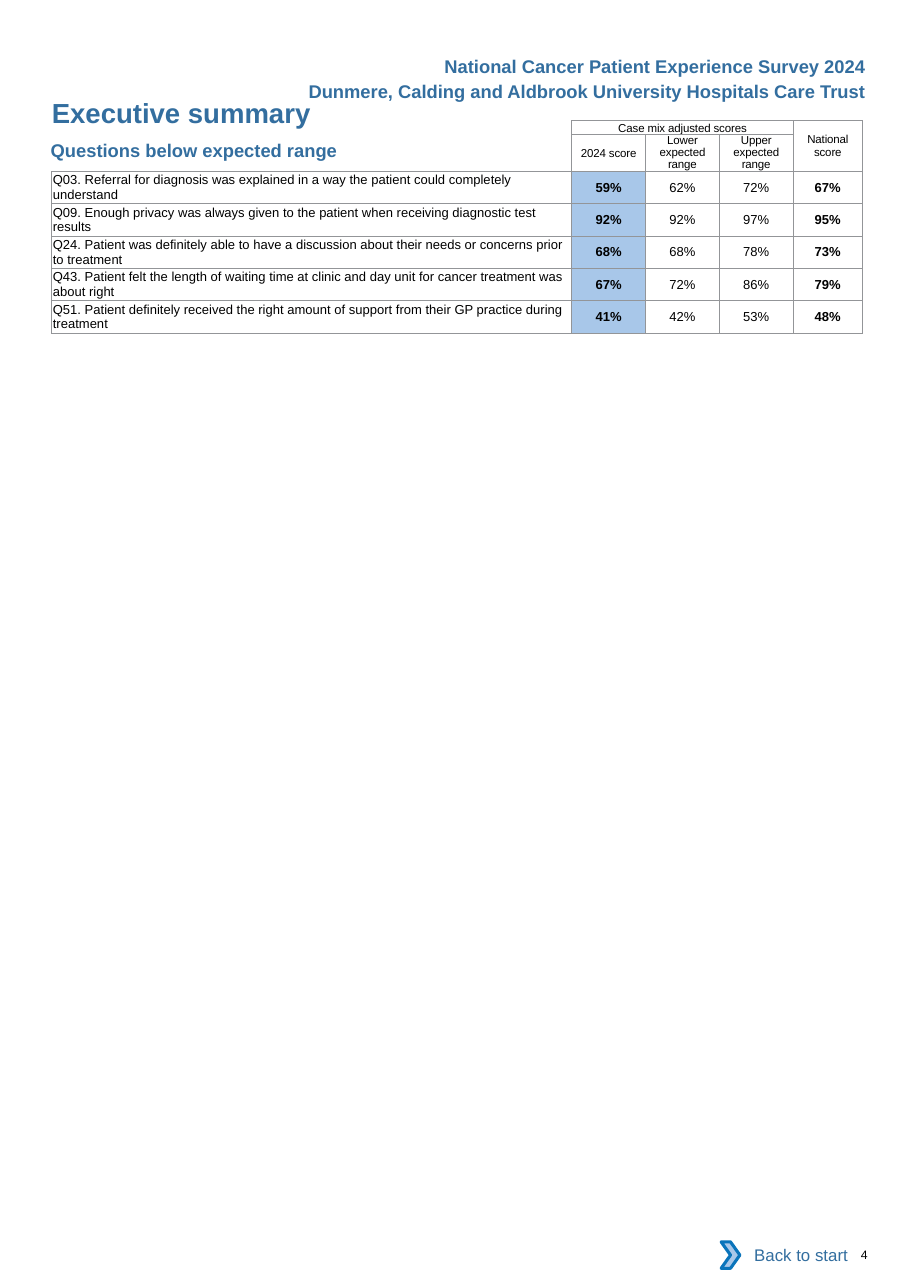
from lxml import etree
from pptx import Presentation, util as u
from pptx.dml.color import RGBColor
from pptx.enum import shapes, text
from pptx.oxml.ns import qn

BLUE = RGBColor(0x33, 0x6E, 0x9F)
LIGHT_BLUE = RGBColor(0xA8, 0xC7, 0xE9)
OUTLINE_BLUE = RGBColor(0x0A, 0x74, 0xBB)
GREY = RGBColor(0x93, 0x95, 0x98)
BLACK = RGBColor(0, 0, 0)
WHITE = RGBColor(255, 255, 255)

WIDTH, HEIGHT = u.Inches(8.26), u.Inches(11.69)
LEFT, CENTER, RIGHT = text.PP_ALIGN.LEFT, text.PP_ALIGN.CENTER, text.PP_ALIGN.RIGHT

LABELS = [
    ("National Cancer Patient Experience Survey 2024", (47.46, 4.3, 47.7, 1.71),
     dict(size=12, bold=True, color=BLUE, align=RIGHT)),
    ("Dunmere, Calding and Aldbrook University Hospitals Care Trust", (30.99, 6.24, 64.17, 1.71),
     dict(size=12, bold=True, color=BLUE, align=RIGHT)),
    ("Executive summary", (5.69, 7.47, 31.96, 2.57), dict(size=18, bold=True, color=BLUE)),
    ("Questions below expected range", (5.57, 10.78, 36.44, 1.71),
     dict(size=12, bold=True, color=BLUE)),
    ("4", (94.6, 96.85, 4.84, 1.11), dict(size=8)),
]
BUTTON = (80.1, 95.65, 14.29, 3.59)
CHEVRON = (79.25, 96.42, 2.06, 2.05)

TABLE_CORNER = (5.69, 9.38)
COLUMNS = [57.14, 8.11, 8.11, 8.11, 7.63]
HEADER_ROWS = [1.07, 2.86]
DATA_ROW = 2.51
MERGES = [((0, 0), (1, 0)), ((0, 1), (0, 3)), ((0, 4), (1, 4))]
HEADERS = {
    (0, 0): ("", 0, None),
    (0, 1): ("Case mix adjusted scores", 0, 9),
    (0, 4): ("National score", 0.08, None),
    (1, 1): ("2024 score", 0, None),
    (1, 2): ("Lower expected range", 0.08, 7.6),
    (1, 3): ("Upper expected range", 0.08, 7.6),
}
SCORES = [
    ("Q03. Referral for diagnosis was explained in a way the patient could completely understand",
     "59%", "62%", "72%", "67%"),
    ("Q09. Enough privacy was always given to the patient when receiving diagnostic test results",
     "92%", "92%", "97%", "95%"),
    ("Q24. Patient was definitely able to have a discussion about their needs or concerns prior to treatment",
     "68%", "68%", "78%", "73%"),
    ("Q43. Patient felt the length of waiting time at clinic and day unit for cancer treatment was about right",
     "67%", "72%", "86%", "79%"),
    ("Q51. Patient definitely received the right amount of support from their GP practice during treatment",
     "41%", "42%", "53%", "48%"),
]


def across(percent):
    return round(WIDTH * percent / 100)


def down(percent):
    return round(HEIGHT * percent / 100)


def place(box):
    left, top, width, height = box
    return across(left), down(top), across(width), down(height)


def write(frame, words, size=8.5, bold=False, color=BLACK, align=LEFT, line=None, spacing=0):
    paragraph = frame.paragraphs[0]
    paragraph.alignment = align
    if line:
        paragraph.line_spacing = u.Pt(line)
    run = paragraph.add_run()
    run.text = words
    run.font.name = "Arial"
    run.font.size = u.Pt(size)
    run.font.bold = bold
    run.font.color.rgb = color
    if spacing:
        run.font._element.set("spc", str(round(spacing * 100)))


def set_borders(cell, sides):
    properties = cell._tc.get_or_add_tcPr()
    for index, side in enumerate("LRTB"):
        border = etree.Element(qn(f"a:ln{side}"), w=str(u.Pt(0.5)))
        if side in sides:
            fill = etree.SubElement(border, qn("a:solidFill"))
            etree.SubElement(fill, qn("a:srgbClr"), val=str(GREY))
        else:
            etree.SubElement(border, qn("a:noFill"))
        properties.insert(index, border)


def fill_cell(cell, words, side=0.0, fill=None, **format):
    cell.margin_left = cell.margin_right = u.Inches(side)
    cell.margin_top = cell.margin_bottom = 0
    cell.vertical_anchor = text.MSO_ANCHOR.MIDDLE
    if fill:
        cell.fill.solid()
        cell.fill.fore_color.rgb = fill
    write(cell.text_frame, words, **format)


def add_label(slide, words, box, format):
    frame = slide.shapes.add_textbox(*place(box)).text_frame
    frame.word_wrap = True
    frame.margin_left = frame.margin_right = frame.margin_top = frame.margin_bottom = 0
    write(frame, words, **format)


def add_scores(slide):
    rows = HEADER_ROWS + [DATA_ROW] * len(SCORES)
    box = (*TABLE_CORNER, sum(COLUMNS), sum(rows))
    table = slide.shapes.add_table(len(rows), len(COLUMNS), *place(box)).table
    table.first_row = table.horz_banding = False
    for column, width in zip(table.columns, COLUMNS):
        column.width = across(width)
    for row, height in zip(table.rows, rows):
        row.height = down(height)
    for cell in table.iter_cells():
        cell.fill.background()
    for start, end in MERGES:
        table.cell(*start).merge(table.cell(*end))
    for position, (words, side, line) in HEADERS.items():
        fill_cell(table.cell(*position), words, side, size=7.5, align=CENTER, line=line, spacing=-0.1)
    for row, (question, *values) in enumerate(SCORES, len(HEADER_ROWS)):
        fill_cell(table.cell(row, 0), question, 0.01)
        for column, value in enumerate(values, 1):
            fill_cell(table.cell(row, column), value, fill=LIGHT_BLUE if column == 1 else None,
                      bold=column in (1, 4), align=CENTER)
    for row in range(len(rows)):
        for column in range(len(COLUMNS)):
            blank_corner = row < len(HEADER_ROWS) and column == 0
            set_borders(table.cell(row, column), "RB" if blank_corner else "LRTB")


def add_back_button(slide):
    group = slide.shapes.add_group_shape()
    button = group.shapes.add_shape(shapes.MSO_SHAPE.RECTANGLE, *place(BUTTON))
    chevron = group.shapes.add_shape(shapes.MSO_SHAPE.CHEVRON, *place(CHEVRON))
    for shape, color in ((button, WHITE), (chevron, LIGHT_BLUE)):
        shape.shadow.inherit = False
        shape.fill.solid()
        shape.fill.fore_color.rgb = color
    button.line.fill.background()
    chevron.line.color.rgb = OUTLINE_BLUE
    chevron.line.width = u.Pt(2)
    button.text_frame.word_wrap = True
    button.text_frame.vertical_anchor = text.MSO_ANCHOR.MIDDLE
    write(button.text_frame, "Back to start", size=11, color=BLUE, align=RIGHT)


def main():
    """Build the executive summary page of the survey report."""
    presentation = Presentation()
    presentation.slide_width, presentation.slide_height = WIDTH, HEIGHT
    slide = presentation.slides.add_slide(presentation.slide_layouts[6])
    add_scores(slide)
    for label in LABELS:
        add_label(slide, *label)
    add_back_button(slide)
    presentation.save("out.pptx")


if __name__ == "__main__":
    main()
